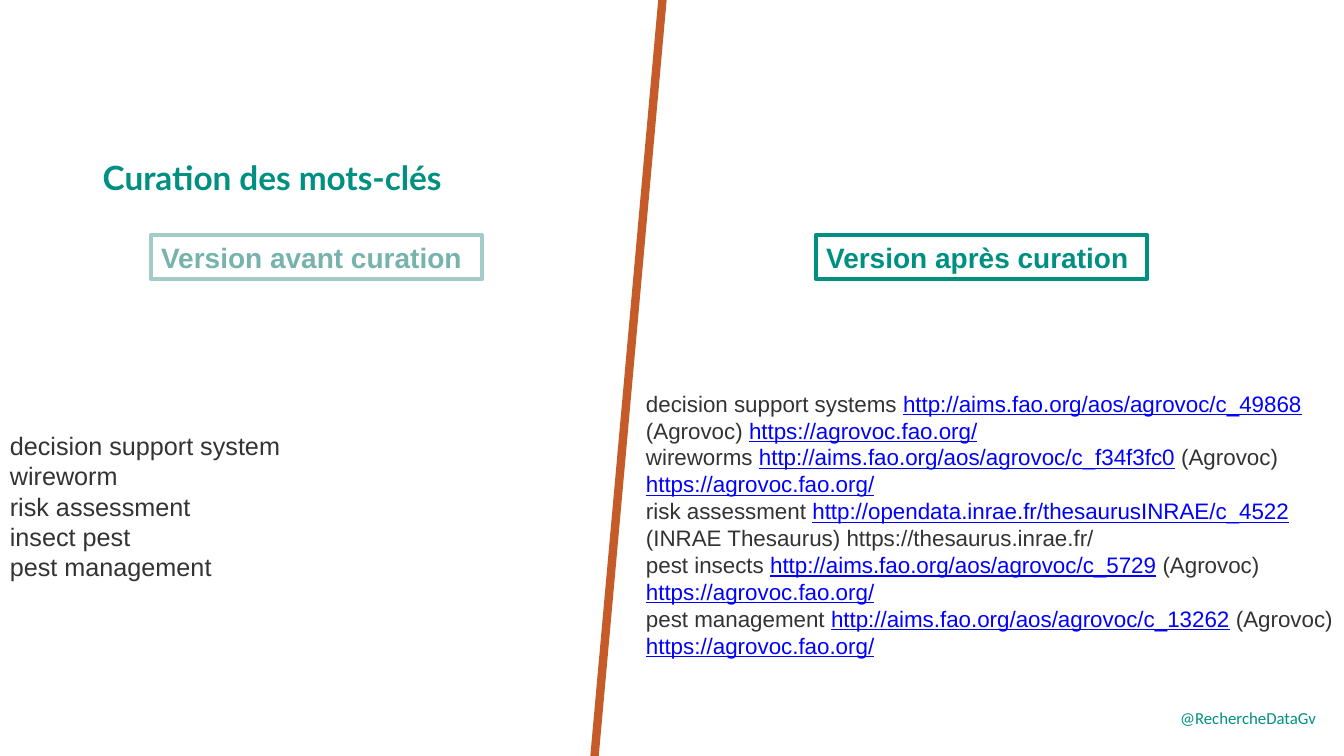
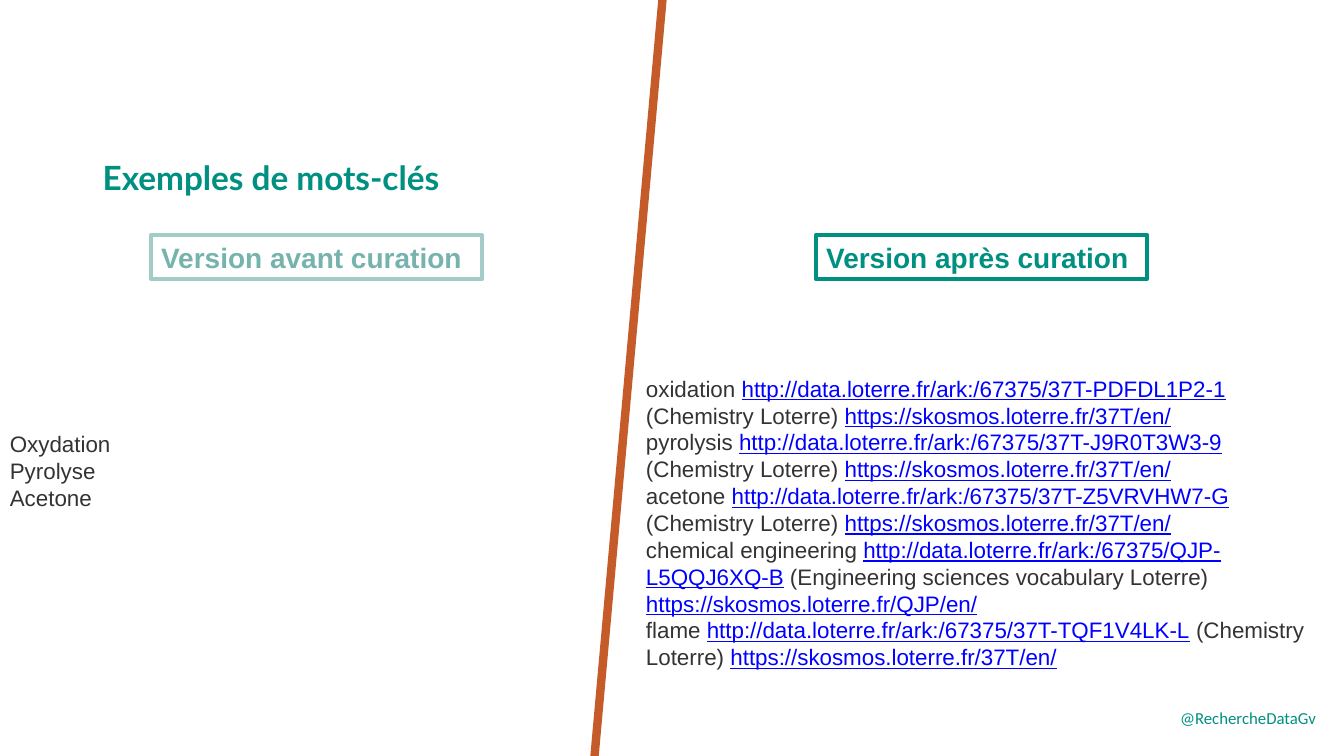
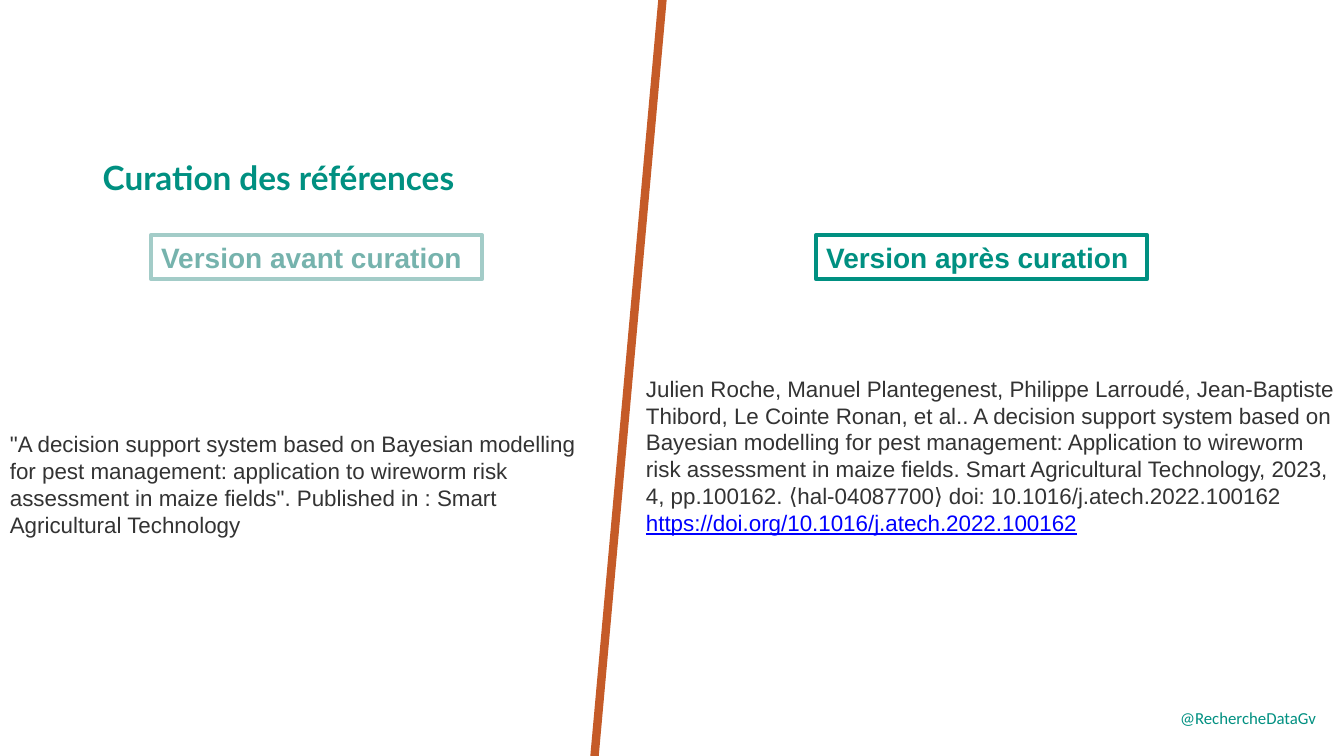
from pptx import Presentation
from pptx.dml.color import RGBColor
from pptx.enum.shapes import MSO_CONNECTOR, MSO_SHAPE
from pptx.enum.text import MSO_ANCHOR, PP_ALIGN
from pptx.oxml.ns import qn
from pptx.util import Cm, Pt
from lxml.etree import SubElement

GREEN, PALE, SOFT = "009081", "A3CCC8", "76B3AD"
RUST, INK, BLUE = "C55B28", "333333", "0000FF"


def color(code):
    return RGBColor.from_string(code)


class Deck:
    fonts = {
        "title": {"name": "Lato", "size": Pt(23.8), "bold": True},
        "label": {"name": "Arial", "size": Pt(20), "bold": True},
        "large": {"name": "Arial", "size": Pt(18)},
        "body": {"name": "Arial", "size": Pt(16)},
        "footer": {"name": "Calibri", "size": Pt(12)},
    }

    def __init__(self):
        self.show = Presentation()
        self.show.slide_width = Cm(33.87)
        self.show.slide_height = Cm(19.05)

    def start(self, title):
        self.slide = self.show.slides.add_slide(self.show.slide_layouts[6])
        self.text((29.49, 17.7, 4.11, 1.27), ["@RechercheDataGv"], "footer", GREEN)
        self.label(20.57, "Version après curation", GREEN, GREEN)
        self.label(3.81, "Version avant curation", PALE, SOFT)
        self.line((16.71, -0.18), (14.96, 19.3), RUST, 6)
        box = self.text((2.34, 4.11, 13.69, 1.02), [title], "title", GREEN)
        box.text_frame.paragraphs[0].line_spacing = 0.7

    def fill(self, frame, lines, style, ink):
        frame.word_wrap = True
        for row, line in enumerate(lines):
            para = frame.add_paragraph() if row else frame.paragraphs[0]
            para.alignment = PP_ALIGN.LEFT
            for part, words in enumerate(line.split("|")):
                if not words:
                    continue
                link = part % 2 == 1
                run = para.add_run()
                run.text = words
                for key, value in self.fonts[style].items():
                    setattr(run.font, key, value)
                run.font.color.rgb = color(BLUE if link else ink)
                run.font.underline = link

    def text(self, place, lines, style="body", ink=INK):
        box = self.slide.shapes.add_textbox(*map(Cm, place))
        self.fill(box.text_frame, lines, style, ink)
        return box

    def label(self, left, words, edge, ink):
        place = map(Cm, (left, 5.92, 8.33, 1.12))
        shape = self.slide.shapes.add_shape(MSO_SHAPE.RECTANGLE, *place)
        shape.shadow.inherit = False
        shape.fill.background()
        shape.line.color.rgb = color(edge)
        shape.line.width = Pt(3)
        shape.text_frame.vertical_anchor = MSO_ANCHOR.MIDDLE
        self.fill(shape.text_frame, [words], "label", ink)

    def line(self, start, end, ink, width):
        line = self.slide.shapes.add_connector(
            MSO_CONNECTOR.STRAIGHT, *map(Cm, start + end))
        line.line.color.rgb = color(ink)
        line.line.width = Pt(width)
        SubElement(line._element.spPr, qn("a:effectLst"))

    def before(self, height, lines, style="body"):
        self.text((0, 10.72, 15.47, height), lines, style)

    def after(self, top, height, lines):
        self.text((16.03, top, 17.86, height), lines)


def entry(term, link, source, site):
    return f"{term} |{link}| ({source}) {site}"


def agro(term, code):
    return entry(term, f"http://aims.fao.org/aos/agrovoc/{code}",
                 "Agrovoc", "|https://agrovoc.fao.org/|")


def loterre(term, code, source="Chemistry Loterre"):
    group = code.split("-")[0]
    return entry(term, f"http://data.loterre.fr/ark:/67375/{code}",
                 source, f"|https://skosmos.loterre.fr/{group}/en/|")


def main():
    deck = Deck()

    deck.start("Curation des mots-clés")
    deck.before(4.06, ["decision support system", "wireworm", "risk assessment",
                       "insect pest", "pest management"], "large")
    deck.after(9.7, 7.04, [
        agro("decision support systems", "c_49868"),
        agro("wireworms", "c_f34f3fc0"),
        entry("risk assessment", "http://opendata.inrae.fr/thesaurusINRAE/c_4522",
              "INRAE Thesaurus", "https://thesaurus.inrae.fr/"),
        agro("pest insects", "c_5729"),
        agro("pest management", "c_13262"),
    ])

    deck.start("Exemples de mots-clés")
    deck.before(2.31, ["Oxydation", "Pyrolyse", "Acetone"])
    deck.after(9.32, 7.7, [
        loterre("oxidation", "37T-PDFDL1P2-1"),
        loterre("pyrolysis", "37T-J9R0T3W3-9"),
        loterre("acetone", "37T-Z5VRVHW7-G"),
        loterre("chemical engineering", "QJP-L5QQJ6XQ-B",
                "Engineering sciences vocabulary Loterre"),
        loterre("flame", "37T-TQF1V4LK-L"),
    ])

    deck.start("Curation des références")
    deck.before(3, [
        '"A decision support system based on Bayesian modelling for pest '
        'management: application to wireworm risk assessment in maize fields". '
        'Published in : Smart Agricultural Technology'])
    deck.after(9.32, 5.05, [
        "Julien Roche, Manuel Plantegenest, Philippe Larroudé, Jean-Baptiste "
        "Thibord, Le Cointe Ronan, et al.. A decision support system based on "
        "Bayesian modelling for pest management: Application to wireworm risk "
        "assessment in maize fields. Smart Agricultural Technology, 2023, 4, "
        "pp.100162. ⟨hal-04087700⟩ doi: 10.1016/j.atech.2022.100162 "
        "|https://doi.org/10.1016/j.atech.2022.100162|"])

    deck.show.save("out.pptx")


if __name__ == "__main__":
    main()
